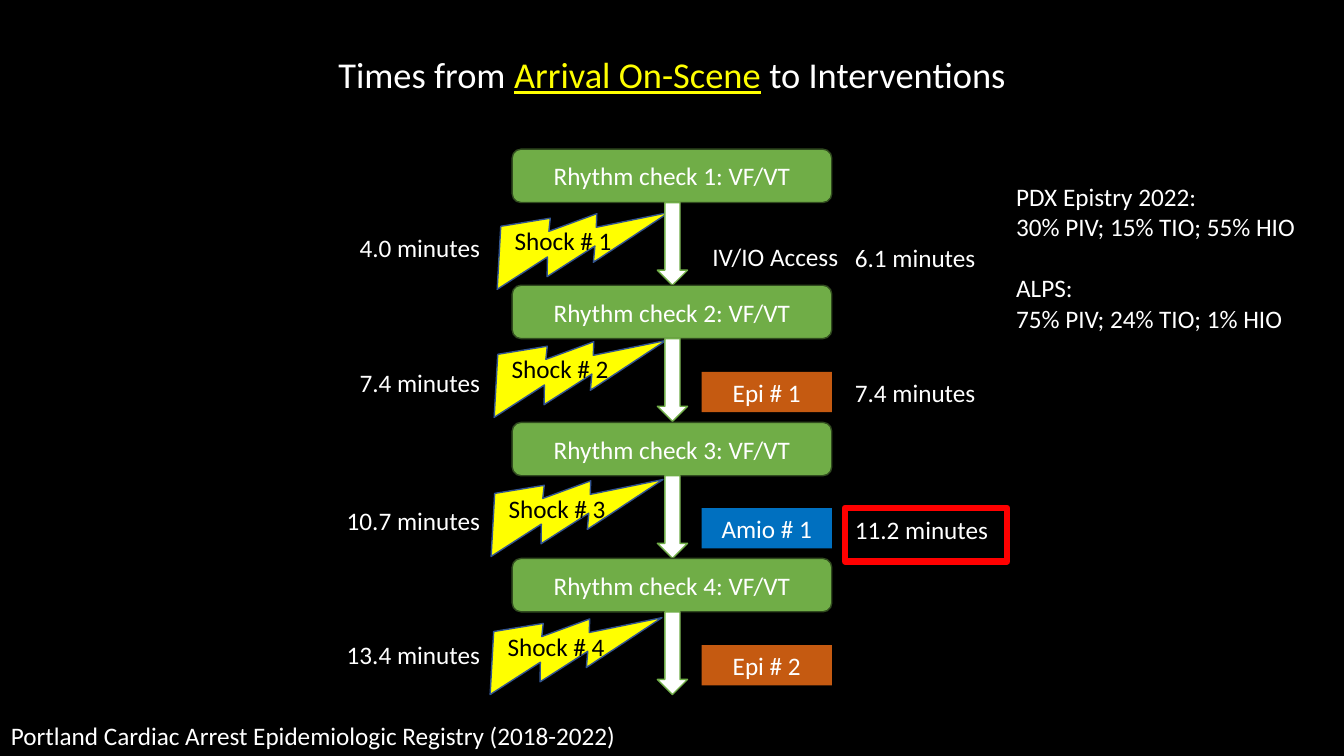
from pptx import Presentation
from pptx.dml.color import RGBColor
from pptx.enum.shapes import MSO_SHAPE as SHAPE
from pptx.enum.text import MSO_ANCHOR as ANCHOR, MSO_AUTO_SIZE as AUTO, PP_ALIGN as ALIGN
from pptx.util import Emu, Pt

PX = 9144
FONT = "Calibri"
COLORS = {
    "black": "000000", "white": "FFFFFF", "yellow": "FFFF00", "navy": "325491",
    "green": "70AD47", "forest": "314C1F", "orange": "C55A11", "blue": "0070C0",
    "red": "FF0000",
}
CHECK_X, CHECK_W, CHECK_H = 508, 317, 53
BOLT_W, BOLT_H, BOLT_ANGLE = 146, 142, 297.3
LABEL_W, LABEL_H = 129, 40
TIME_W = 258
DRUG_X, DRUG_TIME_X = 696, 838

ROUNDS = [
    (148, (494, 172), "4.0 minutes", 226),
    (283, (491, 299), "7.4 minutes", 359),
    (419, (488, 437), "10.7 minutes", 496),
    (554, (487, 574), "13.4 minutes", 629),
]
DRUGS = [
    ("Epi # 1", "orange", 369),
    ("Amio # 1", "blue", 504),
    ("Epi # 2", "orange", 640),
]
DRUG_TIMES = [("6.1 minutes", 235), ("7.4 minutes", 369), ("11.2 minutes", 505)]
ACCESS_ROUTES = [
    "PDX Epistry 2022:", "30% PIV; 15% TIO; 55% HIO",
    "ALPS:", "75% PIV; 24% TIO; 1% HIO",
]


def rgb(name):
    return RGBColor.from_string(COLORS[name])


def box(x, y, w, h):
    return [Emu(v * PX) for v in (x, y, w, h)]


def style_run(r, color, size=18):
    r.font.name = FONT
    r.font.size = Pt(size)
    r.font.color.rgb = rgb(color)


def write(tf, text, color="white", align=ALIGN.CENTER):
    tf.text = text
    for p in tf.paragraphs:
        p.alignment = align
        for r in p.runs:
            style_run(r, color)


def add_text(s, x, y, w, h, text, color="white", align=ALIGN.LEFT):
    tf = s.shapes.add_textbox(*box(x, y, w, h)).text_frame
    tf.word_wrap = True
    tf.auto_size = AUTO.SHAPE_TO_FIT_TEXT
    write(tf, text, color, align)
    return tf


def add_block(s, kind, x, y, w, h, fill=None, line=None, width=1):
    sp = s.shapes.add_shape(kind, *box(x, y, w, h))
    sp.shadow.inherit = False
    if fill:
        sp.fill.solid()
        sp.fill.fore_color.rgb = rgb(fill)
    else:
        sp.fill.background()
    if line:
        sp.line.color.rgb = rgb(line)
        sp.line.width = Pt(width)
    else:
        sp.line.fill.background()
    return sp


def add_title(s):
    tf = add_text(s, 259, 47, 815, 54, "")
    p = tf.paragraphs[0]
    p.alignment = ALIGN.CENTER
    for text, color in (("Times from ", "white"), ("Arrival On-Scene", "yellow"),
                        (" to Interventions", "white")):
        r = p.add_run()
        r.text = text
        style_run(r, color, 26)
        r.font.underline = color == "yellow"


def add_check(s, number, y):
    sp = add_block(s, SHAPE.ROUNDED_RECTANGLE, CHECK_X, y, CHECK_W, CHECK_H, "green", "forest")
    sp.text_frame.vertical_anchor = ANCHOR.MIDDLE
    write(sp.text_frame, f"Rhythm check {number}: VF/VT")
    add_block(s, SHAPE.DOWN_ARROW, 652, y + CHECK_H, 30, 82, "white", "green")


def add_shock(s, number, x, y):
    sp = add_block(s, SHAPE.LIGHTNING_BOLT, x, y, BOLT_W, BOLT_H, "yellow", "navy")
    sp.rotation = BOLT_ANGLE
    add_text(s, x, y + 47, LABEL_W, LABEL_H, f"Shock # {number}", "black", ALIGN.CENTER)


def add_drug(s, name, fill, y):
    sp = add_block(s, SHAPE.RECTANGLE, DRUG_X, y, LABEL_W, LABEL_H, fill)
    sp.text_frame.vertical_anchor = ANCHOR.TOP
    write(sp.text_frame, name)


def main():
    prs = Presentation()
    prs.slide_width, prs.slide_height = Emu(1333 * PX), Emu(750 * PX)
    s = prs.slides.add_slide(prs.slide_layouts[6])
    s.background.fill.solid()
    s.background.fill.fore_color.rgb = rgb("black")

    add_title(s)
    for number, (check_y, bolt, time, time_y) in enumerate(ROUNDS, 1):
        add_shock(s, number, *bolt)
        add_check(s, number, check_y)
        add_text(s, 228, time_y, TIME_W, LABEL_H, time, align=ALIGN.RIGHT)

    add_text(s, DRUG_X, 234, 146, LABEL_H, "IV/IO Access", align=ALIGN.CENTER)
    for name, fill, y in DRUGS:
        add_drug(s, name, fill, y)
    for time, y in DRUG_TIMES:
        add_text(s, DRUG_TIME_X, y, TIME_W, LABEL_H, time)
    add_block(s, SHAPE.RECTANGLE, DRUG_TIME_X, 504, 161, 53, line="red", width=4.5)

    routes = add_text(s, 998, 175, 317, 162, "\n".join(ACCESS_ROUTES))
    routes.paragraphs[2].space_before = Pt(22)
    add_text(s, 1, 710, 622, LABEL_H,
             "Portland Cardiac Arrest Epidemiologic Registry (2018-2022)")
    prs.save("out.pptx")


if __name__ == "__main__":
    main()
